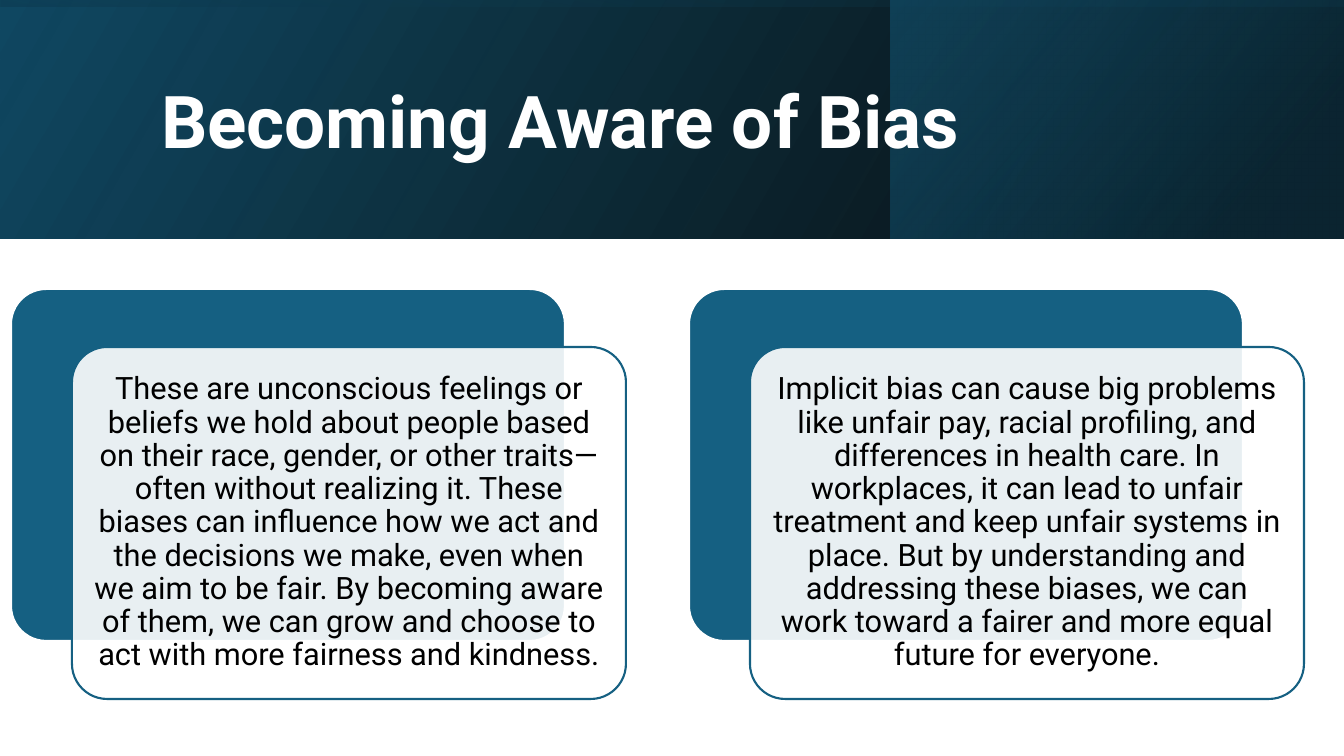
from dataclasses import dataclass

from lxml.etree import SubElement as Sub
from pptx import Presentation
from pptx.dml.color import RGBColor as Rgb
from pptx.enum.shapes import MSO_SHAPE as Kind
from pptx.enum.text import MSO_ANCHOR as Anchor, PP_ALIGN as Align
from pptx.oxml.ns import qn
from pptx.util import Emu, Pt


@dataclass(frozen=True)
class Theme:
    font: str = "Roboto"
    white: str = "FFFFFF"
    black: str = "000000"
    teal: str = "156082"
    deep: str = "104862"
    dark: str = "0B3041"
    title: int = 52
    body: int = 22
    edge: float = 1.5
    lead: float = 0.9


THEME = Theme()
WIDE, HIGH, BAND = 1344, 756, 239
SIDE = 452
CARD_W, CARD_H = 554, 352
CARD_X, CARD_Y, STEP = 11, 289, 678
SHIFT_X, SHIFT_Y, INSET = 61, 58, 9

CARDS = (
    "These are unconscious feelings or beliefs we hold about people based on "
    "their race, gender, or other traits—often without realizing it. These "
    "biases can influence how we act and the decisions we make, even when we "
    "aim to be fair. By becoming aware of them, we can grow and choose to act "
    "with more fairness and kindness.",
    "Implicit bias can cause big problems like unfair pay, racial profiling, "
    "and differences in health care. In workplaces, it can lead to unfair "
    "treatment and keep unfair systems in place. But by understanding and "
    "addressing these biases, we can work toward a fairer and more equal "
    "future for everyone.",
)


def px(num):
    return Emu(round(num * 914400 / 100.8))


def rgb(code):
    return Rgb.from_string(code)


def fade(fill, alpha):
    """Set the opacity, in percent, of a solid fill or gradient stop."""
    for node in fill.iter(qn("a:srgbClr")):
        Sub(node, qn("a:alpha"), val=str(alpha * 1000))


def add_shape(slide, kind, box):
    shape = slide.shapes.add_shape(kind, *map(px, box))
    shape.shadow.inherit = False
    return shape


def add_wash(slide, box, stops, angle, turn=0):
    """Add a mirrored gradient layer; each stop is (place, colour, opacity)."""
    shape = add_shape(slide, Kind.RECTANGLE, box)
    shape.rotation = turn
    shape._element.spPr.find(qn("a:xfrm")).set("flipH", "1")
    shape.line.fill.background()
    shape.fill.gradient()
    shape.fill.gradient_angle = angle
    nodes = shape._element.spPr.iter(qn("a:gs"))
    for stop, node, (place, code, alpha) in zip(shape.fill.gradient_stops, nodes, stops):
        stop.position = place
        stop.color.rgb = rgb(code)
        fade(node, alpha)


def add_panel(slide, box, fill, edge):
    shape = add_shape(slide, Kind.ROUNDED_RECTANGLE, box)
    shape.adjustments[0] = 0.1
    shape.fill.solid()
    shape.fill.fore_color.rgb = rgb(fill)
    shape.line.color.rgb = rgb(edge)
    shape.line.width = Pt(THEME.edge)
    return shape


def set_text(shape, text, size, color, align, bold=False):
    frame = shape.text_frame
    frame.word_wrap = True
    frame.vertical_anchor = Anchor.MIDDLE
    frame.margin_left = frame.margin_right = px(INSET)
    frame.margin_top = frame.margin_bottom = px(INSET)
    para = frame.paragraphs[0]
    para.text = text
    para.alignment = align
    para.line_spacing = THEME.lead
    font = para.font
    font.name, font.size, font.bold = THEME.font, Pt(size), bold
    font.color.rgb = rgb(color)


def add_band(slide):
    add_wash(slide, (0, 0, WIDE, BAND),
             ((0, THEME.black, 96), (1, THEME.deep, 100)), 30)
    add_wash(slide, (WIDE - SIDE - 1, 0, SIDE, BAND),
             ((0.19, THEME.dark, 68), (1, THEME.teal, 48)), 40)
    half = (WIDE - BAND) / 2
    add_wash(slide, (half, -half, BAND, WIDE),
             ((0.23, THEME.deep, 16), (0.99, THEME.black, 45)), 10, 270)


def add_title(slide, text):
    box = slide.shapes.add_textbox(*map(px, (152, 38, 1072, 173)))
    set_text(box, text, THEME.title, THEME.white, Align.LEFT, True)


def add_card(slide, left, text):
    add_panel(slide, (left, CARD_Y, CARD_W, CARD_H), THEME.teal, THEME.white)
    front = add_panel(slide, (left + SHIFT_X, CARD_Y + SHIFT_Y, CARD_W, CARD_H),
                      THEME.white, THEME.teal)
    fade(front._element.spPr.find(qn("a:solidFill")), 90)
    set_text(front, text, THEME.body, THEME.black, Align.CENTER)


def main():
    deck = Presentation()
    deck.slide_width, deck.slide_height = px(WIDE), px(HIGH)
    slide = deck.slides.add_slide(deck.slide_layouts[6])
    add_band(slide)
    add_title(slide, "Becoming Aware of Bias")
    for num, text in enumerate(CARDS):
        add_card(slide, CARD_X + num * STEP, text)
    deck.save("out.pptx")


if __name__ == "__main__":
    main()
